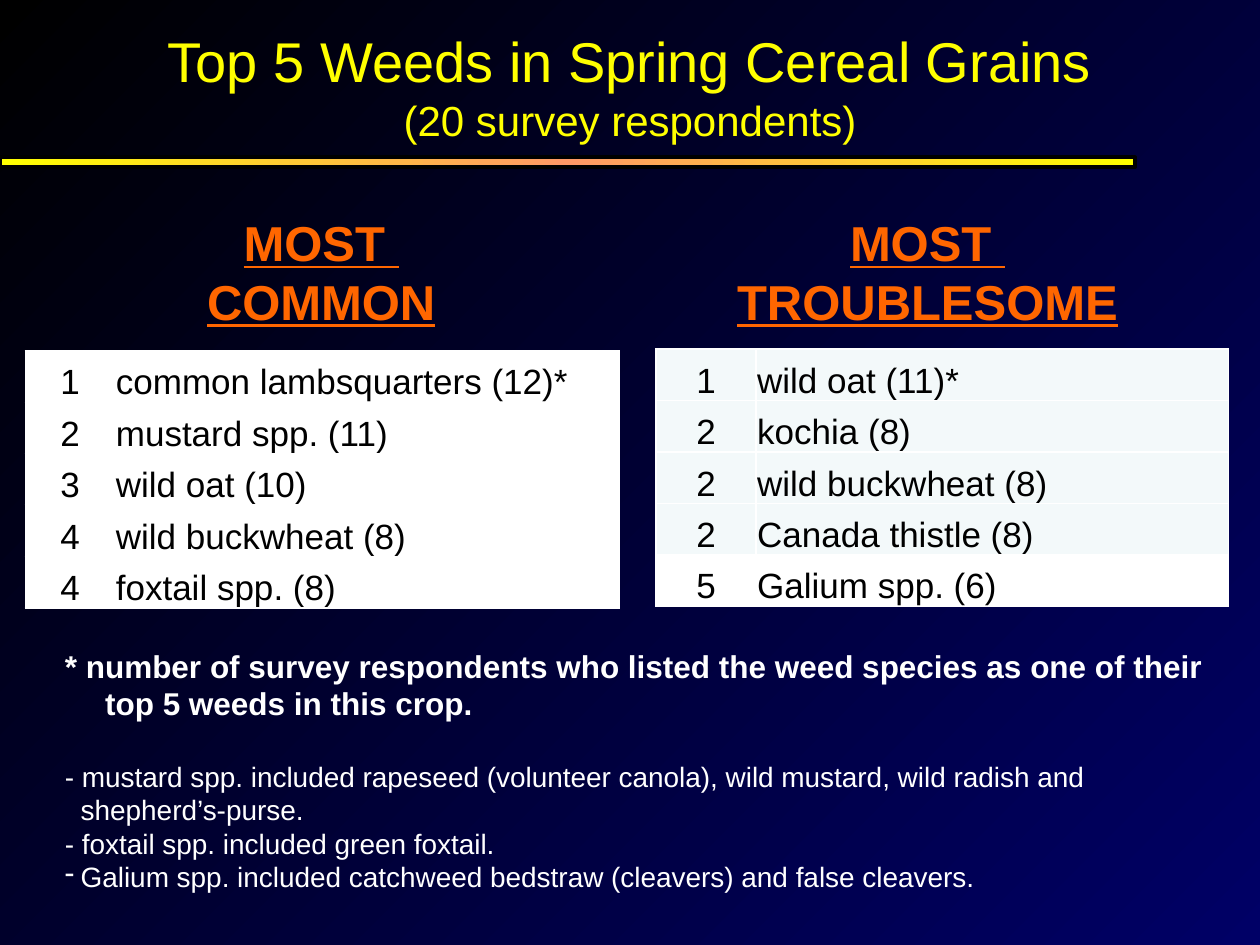
from copy import deepcopy

from lxml import etree
from pptx import Presentation
from pptx import util as u
from pptx.dml.color import RGBColor
from pptx.enum import shapes, text
from pptx.oxml import ns

Pt = u.Pt


def color(hex_string):
    return RGBColor.from_string(hex_string)


class Style:
    font = "Arial"
    yellow, orange, white, black = "FFFF00", "FF6600", "FFFFFF", "000000"

    def __init__(self, page):
        self.page = page

    def gradient(self, fill, element, stops, angle):
        """Fill with (position, colour) stops; angle runs counter-clockwise."""
        fill.gradient()
        fill.gradient_angle = angle
        stop_list = element.xpath(".//a:gsLst")[0]
        while len(stop_list) < len(stops):
            stop_list.append(deepcopy(stop_list[-1]))
        for stop, (position, hex_string) in zip(fill.gradient_stops, stops):
            stop.position = position
            stop.color.rgb = color(hex_string)

    def font_of(self, para, size, hex_string, bold=False, underline=False):
        font = para.font
        font.name, font.size = self.font, Pt(size)
        font.bold, font.underline = bold, underline
        font.color.rgb = color(hex_string)

    def text_box(self, place, lines, hex_string, wrap=True, underline=False,
                 align=text.PP_ALIGN.CENTER, anchor=text.MSO_ANCHOR.TOP):
        """Lines are (wording, size, bold); returns the paragraphs."""
        frame = self.page.shapes.add_textbox(*map(Pt, place)).text_frame
        frame.word_wrap, frame.vertical_anchor = wrap, anchor
        for index, (wording, size, bold) in enumerate(lines):
            para = frame.add_paragraph() if index else frame.paragraphs[0]
            para.text, para.alignment = wording, align
            self.font_of(para, size, hex_string, bold, underline)
        return frame.paragraphs

    def bar(self, place, stops):
        bar = self.page.shapes.add_shape(shapes.MSO_SHAPE.RECTANGLE, *map(Pt, place))
        bar.shadow.inherit = False
        self.gradient(bar.fill, bar._element, stops, 0)
        bar.line.color.rgb = color(self.black)
        bar.line.width = Pt(2.25)

    def hang(self, para, indent, bullet=None):
        properties = para._p.get_or_add_pPr()
        properties.set("marL", str(Pt(indent)))
        properties.set("indent", str(-Pt(indent)))
        if bullet:
            etree.SubElement(properties, ns.qn("a:buChar"), char=bullet)
            # The schema wants the bullet before the default run properties.
            properties.append(properties.find(ns.qn("a:defRPr")))

    def borders(self, cell):
        properties = cell._tc.get_or_add_tcPr()
        for index, side in enumerate(("lnL", "lnR", "lnT", "lnB")):
            line = etree.Element(ns.qn(f"a:{side}"), w=str(Pt(1)))
            fill = etree.SubElement(line, ns.qn("a:solidFill"))
            etree.SubElement(fill, ns.qn("a:srgbClr"), val=self.white)
            properties.insert(index, line)

    def ranking(self, left, top, widths, weeds, fills):
        row_height = 29.4
        table = self.page.shapes.add_table(
            len(weeds), 2, Pt(left), Pt(top), Pt(sum(widths)),
            Pt(row_height * len(weeds))).table
        for column, width in zip(table.columns, widths):
            column.width = Pt(width)
        aligns = text.PP_ALIGN.CENTER, text.PP_ALIGN.LEFT
        for row, weed, fill in zip(table.rows, weeds, fills):
            row.height = Pt(row_height)
            for cell, wording, align in zip(row.cells, weed, aligns):
                cell.margin_left = cell.margin_right = cell.margin_top = Pt(0.7)
                cell.margin_bottom = 0
                cell.vertical_anchor = text.MSO_ANCHOR.BOTTOM
                cell.fill.solid()
                cell.fill.fore_color.rgb = color(fill)
                self.borders(cell)
                para = cell.text_frame.paragraphs[0]
                para.text, para.alignment = wording, align
                self.font_of(para, 20, self.black)


def main():
    deck = Presentation()
    deck.slide_width, deck.slide_height = Pt(720), Pt(540)
    page = deck.slides.add_slide(deck.slide_layouts[6])
    style = Style(page)
    style.gradient(page.background.fill, page._element,
                   [(0, style.black), (1, "000066")], 315)

    style.text_box((24, 6, 672, 86),
                   [("Top 5 Weeds in Spring Cereal Grains", 32, False),
                    ("(20 survey respondents)", 24, False)],
                   style.yellow, anchor=text.MSO_ANCHOR.MIDDLE)
    style.bar((0, 90, 648.5, 5.5),
              [(0, style.yellow), (0.5, "FF9966"), (1, style.yellow)])

    for left, width, wording, wrap in ((97, 173, "COMMON", True),
                                       (412.5, 235, "TROUBLESOME", False)):
        style.text_box((left, 118, width, 75),
                       [("MOST ", 28, True), (wording, 28, True)],
                       style.orange, wrap, underline=True)

    style.ranking(14.5, 200.5, (51, 288.5),
                  [("1", "common lambsquarters (12)*"), ("2", "mustard spp. (11)"),
                   ("3", "wild oat (10)"), ("4", "wild buckwheat (8)"),
                   ("4", "foxtail spp. (8)")],
                  [style.white] * 5)
    style.ranking(375, 199.5, (57, 270),
                  [("1", "wild oat (11)*"), ("2", "kochia (8)"),
                   ("2", "wild buckwheat (8)"), ("2", "Canada thistle (8)"),
                   ("5", "Galium spp. (6)")],
                  ["F3F9FA"] * 4 + [style.white])

    notes = style.text_box(
        (30, 366, 666, 150),
        [("* number of survey respondents who listed the weed species as one of "
          "their\v top 5 weeds in this crop.", 18, True),
         ("- mustard spp. included rapeseed (volunteer canola), wild mustard, "
          "wild radish and shepherd’s-purse.", 16, False),
         ("- foxtail spp. included green foxtail.", 16, False),
         ("Galium spp. included catchweed bedstraw (cleavers) and false cleavers.",
          16, False)],
        style.white, align=text.PP_ALIGN.LEFT)
    notes[1].space_before = Pt(21)
    for para, indent, bullet in zip(notes, (18, 9, 9, 9), (None, None, None, "-")):
        style.hang(para, indent, bullet)

    deck.save("out.pptx")


if __name__ == "__main__":
    main()
